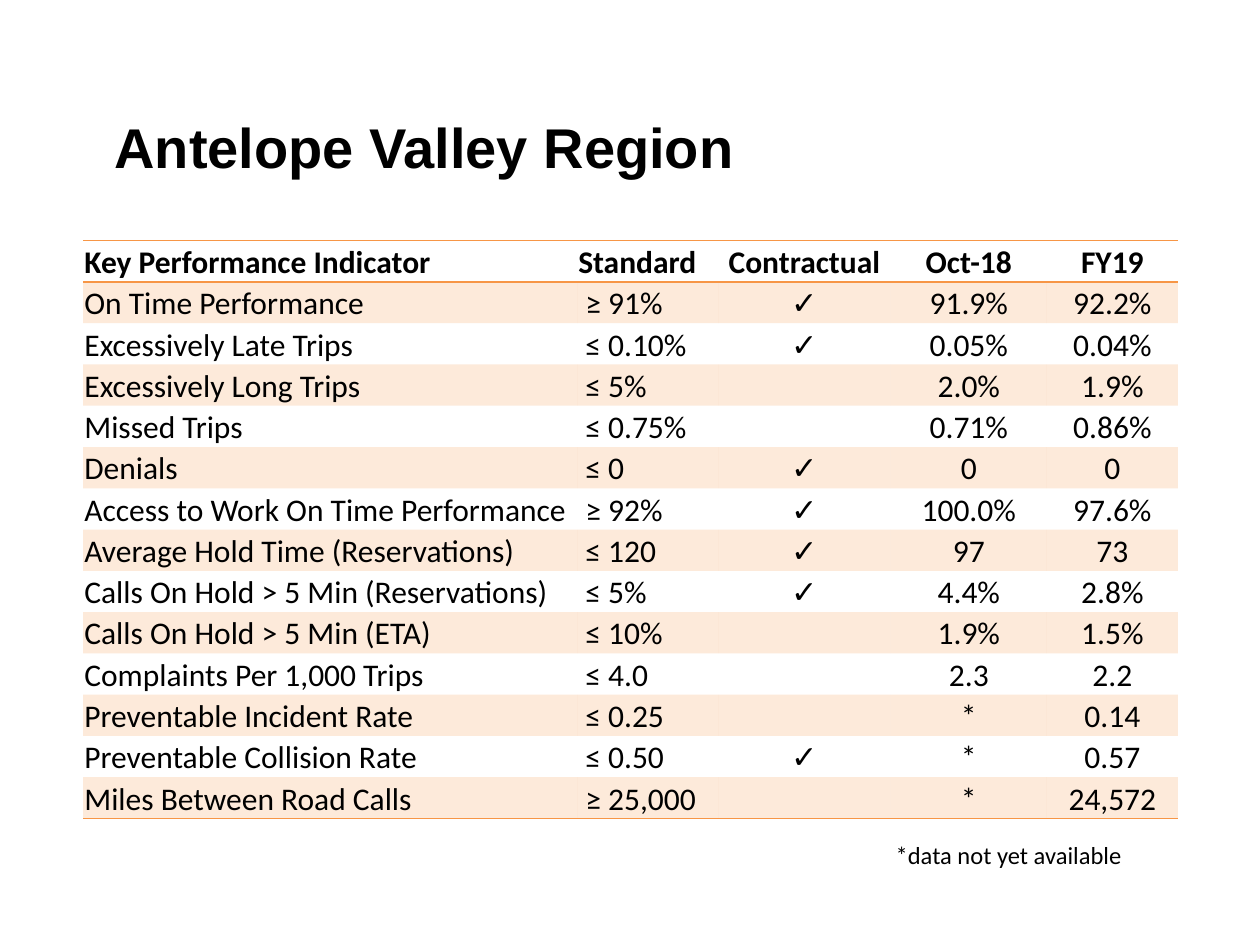
from dataclasses import dataclass

from lxml import etree
from pptx import Presentation
from pptx.dml.color import RGBColor
from pptx.enum.text import MSO_ANCHOR, PP_ALIGN
from pptx.oxml.ns import qn
from pptx.util import Inches, Pt

LEFT, CENTER, RIGHT = PP_ALIGN.LEFT, PP_ALIGN.CENTER, PP_ALIGN.RIGHT
TOP, MIDDLE, BOTTOM = MSO_ANCHOR.TOP, MSO_ANCHOR.MIDDLE, MSO_ANCHOR.BOTTOM
WIDTH, HEIGHT = Inches(10), Inches(7.5)
GRID_COLUMNS, GRID_ROWS = 100, 75
PLAIN_TABLE_STYLE = "{2D5ABB26-0587-4C30-8999-92F81FD0307C}"

HEADER = ("Key Performance Indicator", "Standard", "Contractual", "Oct-18", "FY19")
INDICATORS = [
    ("On Time Performance", " ≥ 91%", "✓", "91.9%", "92.2%"),
    ("Excessively Late Trips", " ≤ 0.10%", "✓", "0.05%", "0.04%"),
    ("Excessively Long Trips", " ≤ 5%", "", "2.0%", "1.9%"),
    ("Missed Trips", " ≤ 0.75%", "", "0.71%", "0.86%"),
    ("Denials", " ≤ 0", "✓", "0", "0"),
    ("Access to Work On Time Performance", " ≥ 92%", "✓", "100.0%", "97.6%"),
    ("Average Hold Time (Reservations)", " ≤ 120", "✓", "97", "73"),
    ("Calls On Hold > 5 Min (Reservations)", " ≤ 5%", "✓", "4.4%", "2.8%"),
    ("Calls On Hold > 5 Min (ETA)", " ≤ 10%", "", "1.9%", "1.5%"),
    ("Complaints Per 1,000 Trips", " ≤ 4.0", "", "2.3", "2.2"),
    ("Preventable Incident Rate", " ≤ 0.25", "", "*", "0.14"),
    ("Preventable Collision Rate", " ≤ 0.50", "✓", "*", "0.57"),
    ("Miles Between Road Calls", " ≥ 25,000", "", "*", "24,572"),
]
COLUMN_WIDTHS = (39.2, 11.2, 13.7, 12.4, 10.4)
COLUMN_ALIGNMENTS = (LEFT, LEFT, CENTER, CENTER, CENTER)


@dataclass(frozen=True)
class Theme:
    ink: RGBColor = RGBColor(0, 0, 0)
    accent: RGBColor = RGBColor(0xF7, 0x96, 0x46)
    band_alpha: int = 20
    rule: int = Pt(1)
    heading_font: str = "Arial"
    body_font: str = "Calibri"
    title_size: int = Pt(32)
    table_size: int = Pt(18)
    note_size: int = Pt(14)


class SlideBuilder:
    """Draws text and tables on one slide, in grid columns and rows."""

    def __init__(self, slide, theme):
        self.slide = slide
        self.theme = theme

    def across(self, columns):
        return round(WIDTH * columns / GRID_COLUMNS)

    def down(self, rows):
        return round(HEIGHT * rows / GRID_ROWS)

    def place(self, left, top, width, height):
        return self.across(left), self.down(top), self.across(width), self.down(height)

    def fill_para(self, para, text, align, **font_format):
        para.alignment = align
        if text:
            span = para.add_run()
            span.text = text
            for name, value in font_format.items():
                setattr(span.font, name, value)
            span.font.color.rgb = self.theme.ink

    def text(self, area, text, align=LEFT, anchor=TOP, **font_format):
        frame = self.slide.shapes.add_textbox(*self.place(*area)).text_frame
        frame.word_wrap = True
        frame.vertical_anchor = anchor
        self.fill_para(frame.paragraphs[0], text, align, **font_format)

    def shade(self, cell):
        cell.fill.solid()
        cell.fill.fore_color.rgb = self.theme.accent
        color = cell._tc.tcPr.find(".//" + qn("a:srgbClr"))
        etree.SubElement(color, qn("a:alpha"), val=str(self.theme.band_alpha * 1000))

    def border(self, cell, side):
        line = etree.Element(qn("a:" + side), w=str(self.theme.rule))
        fill = etree.SubElement(line, qn("a:solidFill"))
        etree.SubElement(fill, qn("a:srgbClr"), val=str(self.theme.accent))
        cell._tc.get_or_add_tcPr().insert(0, line)

    def table(self, area, rows, widths, alignments):
        frame = self.slide.shapes.add_table(len(rows), len(widths), *self.place(*area))
        table = frame.table
        table.horz_banding = False
        table._tbl.tblPr.find(qn("a:tableStyleId")).text = PLAIN_TABLE_STYLE
        for column, width in zip(table.columns, widths):
            column.width = self.across(width)
        cell_format = {
            "vertical_anchor": BOTTOM,
            "margin_left": Inches(0.01),
            "margin_right": Inches(0.01),
            "margin_top": Inches(0.01),
            "margin_bottom": 0,
        }
        for row_index, row in enumerate(rows):
            is_header = row_index == 0
            for column_index, (text, align) in enumerate(zip(row, alignments)):
                cell = table.cell(row_index, column_index)
                for name, value in cell_format.items():
                    setattr(cell, name, value)
                self.fill_para(cell.text_frame.paragraphs[0], text, align, bold=is_header,
                               name=self.theme.body_font, size=self.theme.table_size)
                if row_index % 2:
                    self.shade(cell)
                else:
                    cell.fill.background()
                if is_header or row_index == len(rows) - 1:
                    self.border(cell, "lnB")
                if is_header:
                    self.border(cell, "lnT")


def main():
    deck = Presentation()
    deck.slide_width, deck.slide_height = WIDTH, HEIGHT
    theme = Theme()
    page = SlideBuilder(deck.slides.add_slide(deck.slide_layouts[6]), theme)
    page.text((8.1, 8.4, 83.9, 6.4), "Antelope Valley Region", anchor=MIDDLE,
              name=theme.heading_font, size=theme.title_size, bold=True)
    page.table((6.6, 19.1, 86.8, 45.9), [HEADER, *INDICATORS],
               COLUMN_WIDTHS, COLUMN_ALIGNMENTS)
    page.text((64.4, 66.2, 25.6, 3.4), "*data not yet available", align=RIGHT,
              name=theme.body_font, size=theme.note_size)
    deck.save("out.pptx")


if __name__ == "__main__":
    main()
